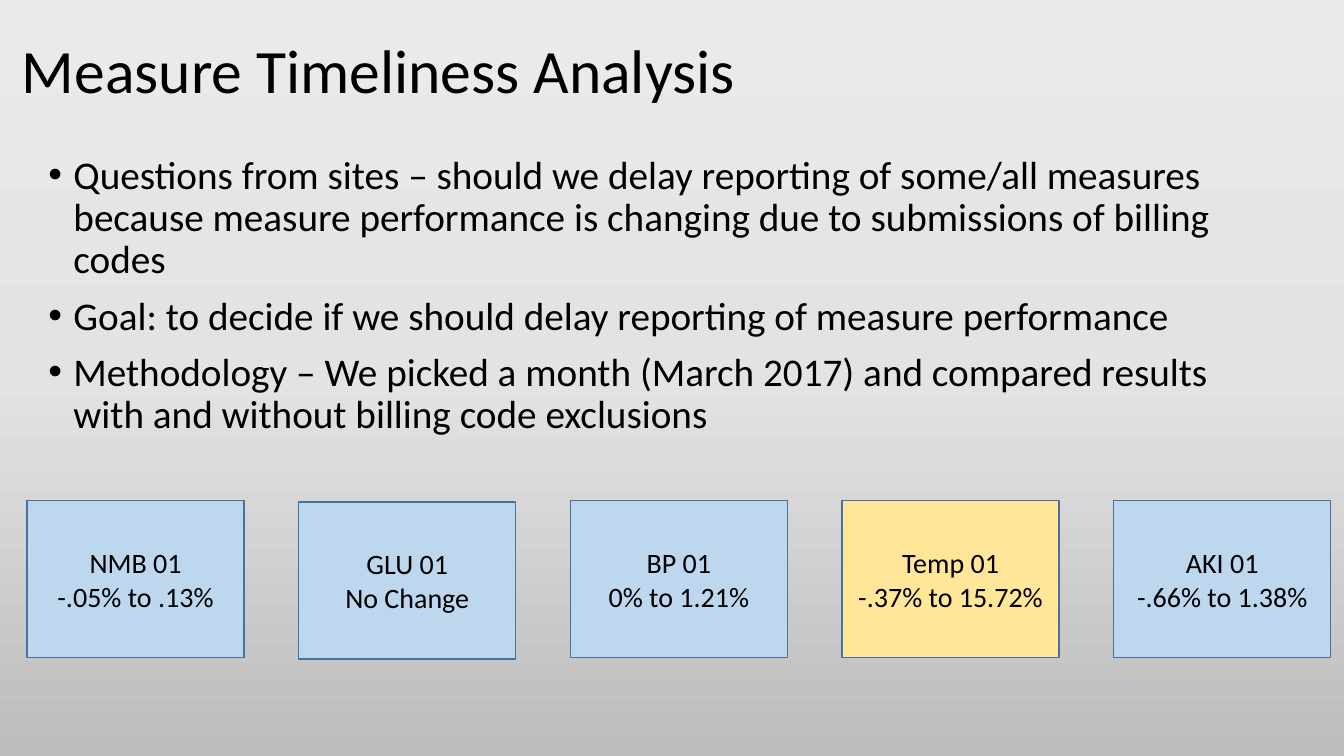
from copy import deepcopy

from lxml import etree
from pptx import Presentation
from pptx.dml.color import RGBColor
from pptx.enum import shapes, text
from pptx.oxml import ns
from pptx.util import Pt

BLACK = RGBColor(0x00, 0x00, 0x00)
BLUE = RGBColor(0xBD, 0xD7, 0xEE)
YELLOW = RGBColor(0xFF, 0xE6, 0x99)
OUTLINE = RGBColor(0x43, 0x73, 0x9E)
GRADIENT = [
    (0, RGBColor(0xEB, 0xEA, 0xEA)),
    (0.5, RGBColor(0xE4, 0xE3, 0xE3)),
    (1, RGBColor(0xBD, 0xBC, 0xBC)),
]

TITLE = "Measure Timeliness Analysis"
POINTS = [
    "Questions from sites – should we delay reporting of some/all measures "
    "because measure performance is changing due to submissions of billing codes",
    "Goal: to decide if we should delay reporting of measure performance",
    "Methodology – We picked a month (March 2017) and compared results "
    "with and without billing code exclusions",
]
MEASURES = [
    ("NMB 01", "-.05% to .13%", BLUE, 0),
    ("GLU 01", "No Change", BLUE, 1),
    ("BP 01", "0% to 1.21%", BLUE, 0),
    ("Temp 01", "-.37% to 15.72%", YELLOW, 0),
    ("AKI 01", "-.66% to 1.38%", BLUE, 0),
]


def write_lines(frame, lines, size, formats, bullet=False):
    """Fill a text frame with one formatted paragraph per line."""
    frame.word_wrap = True
    for index, line in enumerate(lines):
        paragraph = frame.paragraphs[0] if index == 0 else frame.add_paragraph()
        if bullet:
            properties = paragraph._p.get_or_add_pPr()
            properties.set("marL", str(Pt(18)))
            properties.set("indent", str(-Pt(18)))
            etree.SubElement(properties, ns.qn("a:buFont")).set("typeface", "Arial")
            etree.SubElement(properties, ns.qn("a:buChar")).set("char", "•")
            if index:
                paragraph.space_before = Pt(10)
        for name, value in formats.items():
            setattr(paragraph, name, value)
        run = paragraph.add_run()
        run.text = line
        for name, value in {"name": "Calibri", "size": Pt(size)}.items():
            setattr(run.font, name, value)
        run.font.color.rgb = BLACK


def paint_background(slide):
    """Give the slide its vertical grey gradient."""
    fill = slide.background.fill
    fill.gradient()
    fill.gradient_angle = 270
    first = fill.gradient_stops[0]._gs
    first.addnext(deepcopy(first))
    for stop, (position, color) in zip(fill.gradient_stops, GRADIENT):
        stop.position = position
        stop.color.rgb = color


def add_title(slide, left, top, width, height):
    """Place the slide title, centred vertically in its box."""
    box = slide.shapes.add_textbox(Pt(left), Pt(top), Pt(width), Pt(height))
    box.text_frame.vertical_anchor = text.MSO_ANCHOR.MIDDLE
    write_lines(box.text_frame, [TITLE], 44, {"line_spacing": 0.9})


def add_points(slide, left, top, width, height):
    """Place the bulleted points."""
    box = slide.shapes.add_textbox(Pt(left), Pt(top), Pt(width), Pt(height))
    write_lines(box.text_frame, POINTS, 28, {"line_spacing": 0.9}, bullet=True)


def add_measures(slide, left, top, width, height):
    """Spread the measure cards evenly over the given box."""
    card_width = 155
    pitch = (width - card_width) / (len(MEASURES) - 1)
    for index, (name, change, color, drop) in enumerate(MEASURES):
        card = slide.shapes.add_shape(
            shapes.MSO_SHAPE.RECTANGLE,
            Pt(left + index * pitch), Pt(top + drop), Pt(card_width), Pt(height),
        )
        card.shadow.inherit = False
        card.fill.solid()
        card.fill.fore_color.rgb = color
        card.line.color.rgb = OUTLINE
        card.line.width = Pt(1)
        card.text_frame.vertical_anchor = text.MSO_ANCHOR.MIDDLE
        write_lines(card.text_frame, [name, change], 20,
                    {"alignment": text.PP_ALIGN.CENTER})


def main():
    """Build and save the presentation."""
    presentation = Presentation()
    presentation.slide_width = Pt(960)
    presentation.slide_height = Pt(540)
    slide = presentation.slides.add_slide(presentation.slide_layouts[6])
    paint_background(slide)
    add_title(slide, 8.6, 15, 828, 75.6)
    add_points(slide, 27.4, 107.3, 888.5, 221.8)
    add_measures(slide, 19.4, 357.6, 931.2, 112.2)
    presentation.save("out.pptx")


if __name__ == "__main__":
    main()
